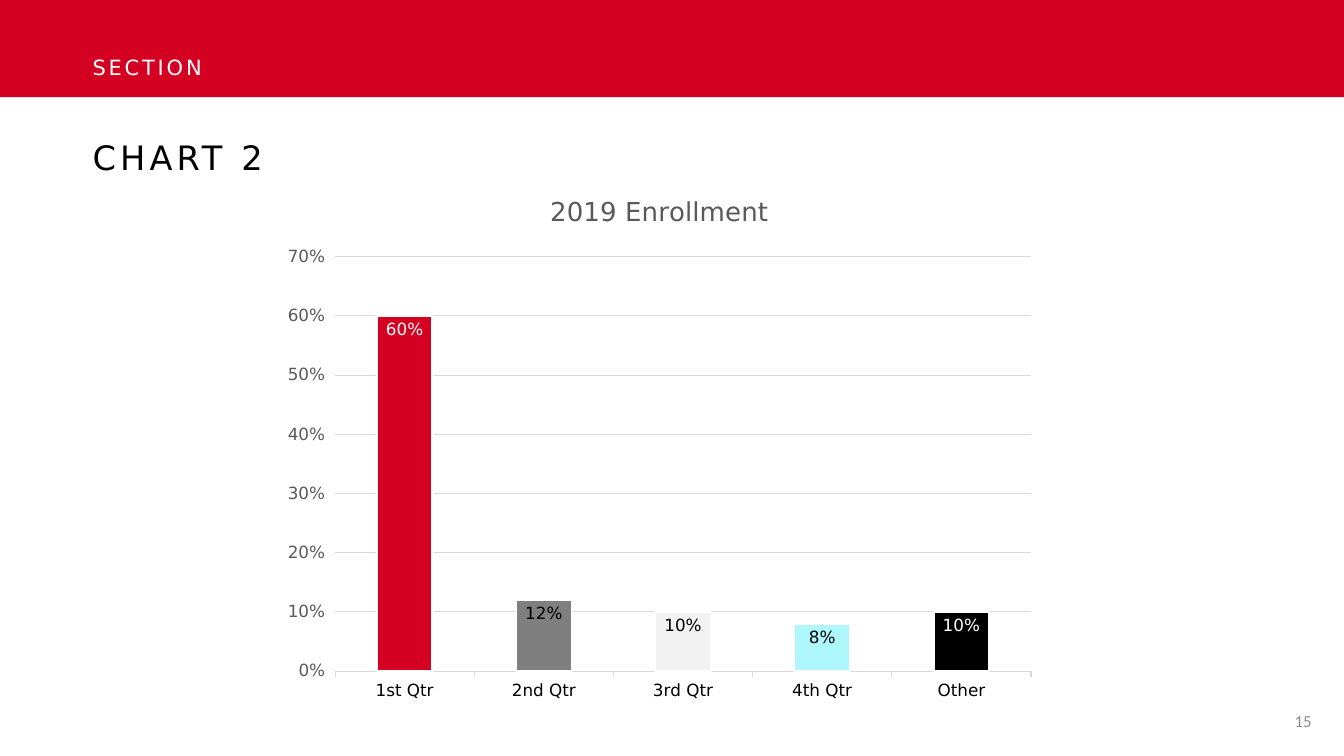
from pptx import Presentation
from pptx.chart.data import CategoryChartData
from pptx.dml.color import RGBColor
from pptx.enum.chart import XL_CHART_TYPE, XL_LABEL_POSITION, XL_TICK_MARK
from pptx.enum.shapes import MSO_SHAPE
from pptx.enum.text import MSO_ANCHOR, PP_ALIGN
from pptx.util import Pt

COLUMN = XL_CHART_TYPE.COLUMN_CLUSTERED
IN_END = XL_LABEL_POSITION.INSIDE_END
OUT, NONE = XL_TICK_MARK.OUTSIDE, XL_TICK_MARK.NONE
RECT = MSO_SHAPE.RECTANGLE
TOP, MIDDLE = MSO_ANCHOR.TOP, MSO_ANCHOR.MIDDLE
LEFT, RIGHT = PP_ALIGN.LEFT, PP_ALIGN.RIGHT
RED, WHITE, BLACK = "D40021", "FFFFFF", "000000"
GREY, RULE = "595959", "D9D9D9"
SANS = "DejaVu Sans"


def color(code):
    return RGBColor.from_string(code)


class Deck:
    """Holds the style and the current slide, and draws each kind of element."""

    def __init__(self, width, height):
        self.prs = Presentation()
        self.prs.slide_width, self.prs.slide_height = Pt(width), Pt(height)
        self.slide = self.prs.slides.add_slide(self.prs.slide_layouts[6])
        self.shapes = self.slide.shapes

    def style(self, font, size, code, face=SANS):
        font.name, font.size, font.bold = face, Pt(size), False
        font.color.rgb = color(code)

    def fill(self, item, code):
        item.fill.solid()
        item.fill.fore_color.rgb = color(code)

    def line(self, line, code, width):
        line.color.rgb = color(code)
        line.width = Pt(width)

    def band(self, box, code):
        band = self.shapes.add_shape(RECT, *map(Pt, box))
        band.shadow.inherit = False
        self.fill(band, code)
        band.line.fill.background()

    def text(self, box, words, size, code, face=SANS, space=0, align=LEFT, anchor=TOP):
        frame = self.shapes.add_textbox(*map(Pt, box)).text_frame
        frame.word_wrap = True
        frame.vertical_anchor = anchor
        para = frame.paragraphs[0]
        para.alignment = align
        run = para.add_run()
        run.text = words
        self.style(run.font, size, code, face)
        if space:
            run.font._element.set("spc", str(space * 100))

    def axis(self, axis, code):
        self.style(axis.tick_labels.font, 12, code)
        axis.minor_tick_mark = NONE
        axis.major_tick_mark = OUT

    def label(self, label, code):
        self.style(label.font, 12, code)
        label.position = IN_END

    def chart(self, box, title, bars):
        data = CategoryChartData(number_format="0%")
        data.categories = [name for name, *_ in bars]
        data.add_series(title, [value for _, value, *_ in bars])
        chart = self.shapes.add_chart(COLUMN, *map(Pt, box), data).chart
        self.style(chart.font, 10, BLACK)
        chart.has_legend = False
        chart.has_title = True
        run = chart.chart_title.text_frame.paragraphs[0].add_run()
        run.text = title
        self.style(run.font, 18.6, GREY)
        chart.chart_title.include_in_layout = False

        cats, vals = chart.category_axis, chart.value_axis
        self.axis(cats, BLACK)
        self.line(cats.format.line, RULE, 0.75)
        self.axis(vals, GREY)
        vals.format.line.fill.background()
        vals.minimum_scale, vals.maximum_scale, vals.major_unit = 0, 0.7, 0.1
        vals.tick_labels.number_format = "0%"
        vals.tick_labels.number_format_is_linked = False
        vals.has_major_gridlines = True
        self.line(vals.major_gridlines.format.line, RULE, 0.75)

        plot = chart.plots[0]
        plot.gap_width = 150
        plot.vary_by_categories = False
        series = plot.series[0]
        self.fill(series.format, RED)
        self.line(series.format.line, WHITE, 1.5)
        labels = series.data_labels
        labels.show_value = True
        labels.number_format = "0%"
        labels.number_format_is_linked = False
        self.label(labels, BLACK)
        for place, (_, _, code, ink) in enumerate(bars):
            point = series.points[place]
            self.fill(point.format, code)
            self.line(point.format.line, WHITE, 1.5)
            if ink != BLACK:
                self.label(point.data_label, ink)


def main():
    deck = Deck(960, 540)
    deck.band((-0.5, 0, 960.5, 69.5), RED)
    deck.text((59, 35.5, 356, 29), "SECTION", 15, WHITE, space=2)
    deck.text((59, 94, 409, 30), "CHART 2", 24, BLACK, space=3)
    deck.text((720, 500.5, 224, 29), "15", 12, "8C8C8C", "Calibri", align=RIGHT, anchor=MIDDLE)
    bars = [
        ("1st Qtr", 0.6, RED, WHITE),
        ("2nd Qtr", 0.12, "7F7F7F", BLACK),
        ("3rd Qtr", 0.1, "F2F2F2", BLACK),
        ("4th Qtr", 0.08, "ADF7FD", BLACK),
        ("Other", 0.1, BLACK, WHITE),
    ]
    deck.chart((194.5, 124, 553, 384.5), "2019 Enrollment", bars)
    deck.prs.save("out.pptx")


if __name__ == "__main__":
    main()
